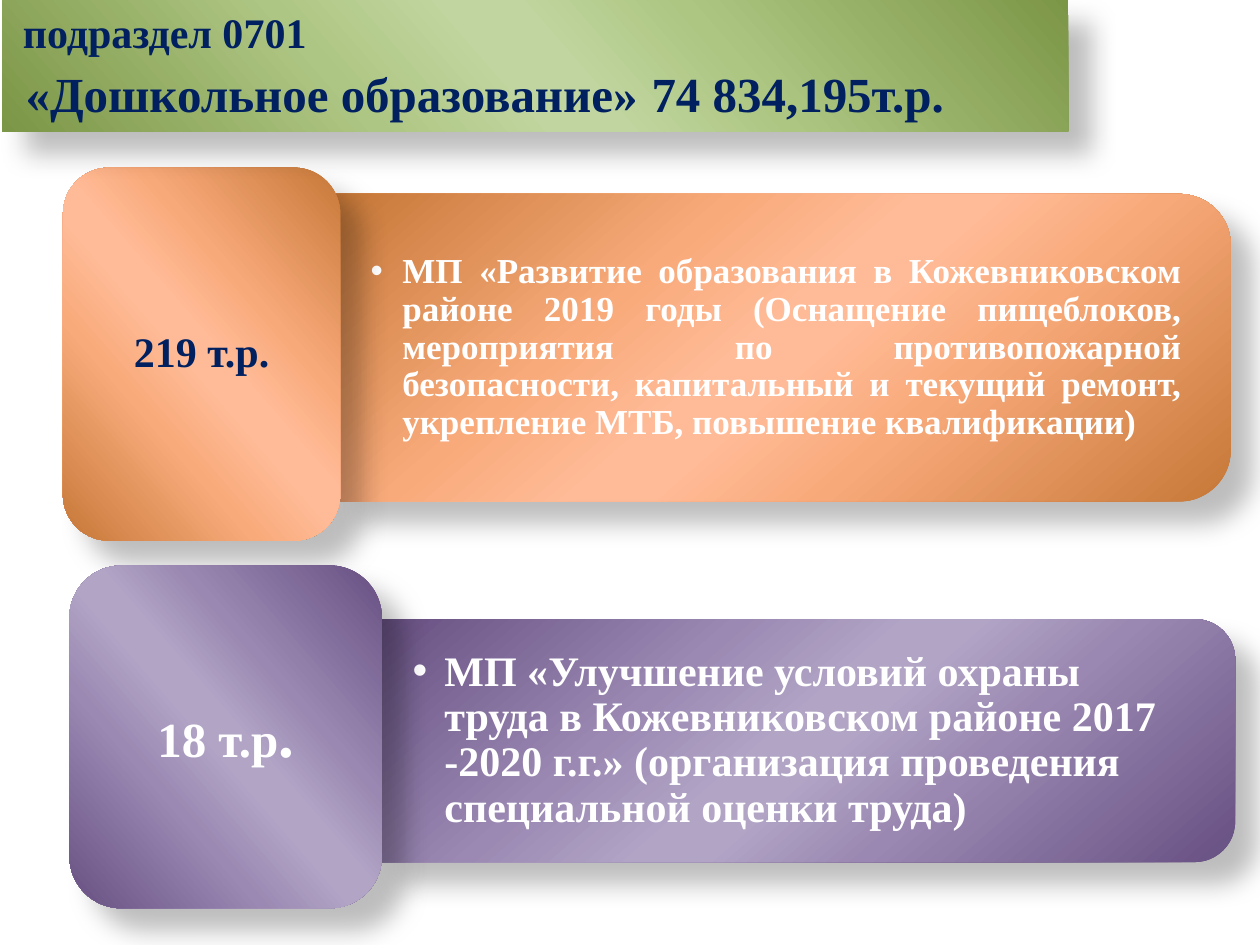
from pptx import Presentation
from pptx.dml.color import RGBColor
from pptx.enum.shapes import MSO_SHAPE
from pptx.enum.text import MSO_ANCHOR, MSO_AUTO_SIZE, PP_ALIGN
from pptx.oxml import parse_xml
from pptx.oxml.ns import nsdecls
from pptx.util import Cm, Pt

FONT = "Times New Roman"
NAVY, WHITE = "002060", "FFFFFF"
STOPS = (0, 33, 47, 53, 68, 100)
ORANGE = ("C67838", "F8A979", "FFBB97", "FFBB97", "F8AA7A", "C67838")
PURPLE = ("675082", "9A88B2", "B1A4C5", "B1A4C5", "9B89B3", "675082")
GREEN = ("7C9647", "ADC682", "C0D59F", "C0D59F", "AEC683", "7C9647")
CORNER_INSET = 0.0488


def rgb(value):
    """Return the colour for a hex string."""
    return RGBColor.from_string(value)


def place(sp, x, y, w, h):
    """Move and size a shape, in centimetres."""
    sp.left, sp.top, sp.width, sp.height = Cm(x), Cm(y), Cm(w), Cm(h)


def bring_to_front(sp):
    """Move a shape to the top of the drawing order."""
    sp.element.getparent().append(sp.element)


def style_glossy(sp, colors):
    """Give a shape the diagonal gradient and the soft shadow."""
    stops = "".join(
        f'<a:gs pos="{pos * 1000}"><a:srgbClr val="{color}"/></a:gs>'
        for pos, color in zip(STOPS, colors))
    spPr = sp.element.spPr
    spPr.append(parse_xml(
        f'<a:gradFill {nsdecls("a")} rotWithShape="1"><a:gsLst>{stops}</a:gsLst>'
        f'<a:lin ang="{139 * 60000}" scaled="0"/></a:gradFill>'))
    sp.line.fill.background()
    spPr.append(parse_xml(
        f'<a:effectLst {nsdecls("a")}><a:outerShdw blurRad="{Pt(15)}" dist="{Pt(18)}" '
        'dir="2700000" algn="ctr" rotWithShape="0"><a:srgbClr val="000000">'
        '<a:alpha val="26000"/></a:srgbClr></a:outerShdw></a:effectLst>'))


def add_run(p, text, size, color):
    """Add one bold run to a paragraph."""
    r = p.add_run()
    r.text = text
    r.font.name, r.font.size, r.font.bold = FONT, Pt(size), True
    r.font.color.rgb = rgb(color)


def build_header(title, box):
    """Turn the title placeholder into the green header band."""
    place(title, *box)
    style_glossy(title, GREEN)
    tf = title.text_frame
    tf.word_wrap = True
    tf.auto_size = MSO_AUTO_SIZE.SHAPE_TO_FIT_TEXT
    tf.vertical_anchor = MSO_ANCHOR.TOP
    p = tf.paragraphs[0]
    p.alignment = PP_ALIGN.LEFT
    add_run(p, " ", 18, NAVY)
    add_run(p, "подраздел 0701", 24, NAVY)
    p.add_line_break()
    add_run(p, " ", 24, NAVY)
    add_run(p, "«Дошкольное образование»", 28, NAVY)
    add_run(p, " ", 32, NAVY)
    add_run(p, "74 834,195т.р.", 28, NAVY)
    bring_to_front(title)


def add_bar(s, box, colors):
    """Add a horizontal bar with its right corners rounded."""
    x, y, w, h = box
    sp = s.shapes.add_shape(
        MSO_SHAPE.ROUND_2_SAME_RECTANGLE,
        Cm(x + (w - h) / 2), Cm(y + (h - w) / 2), Cm(h), Cm(w))
    sp.rotation = 90
    style_glossy(sp, colors)


def fill_program(body, box, text, size, align):
    """Set the body placeholder as a bulleted list inside its bar."""
    x, y, w, h = box
    inset = h * CORNER_INSET
    place(body, x, y + inset, w - inset, h - 2 * inset)
    tf = body.text_frame
    tf.word_wrap = True
    tf.auto_size = MSO_AUTO_SIZE.NONE
    tf.vertical_anchor = MSO_ANCHOR.MIDDLE
    tf.margin_left = tf.margin_right = Cm(0.69)
    tf.margin_top = tf.margin_bottom = Cm(0.36)
    p = tf.paragraphs[0]
    pPr = p._p.get_or_add_pPr()
    pPr.set("marL", str(Cm(0.64)))
    pPr.set("indent", str(-Cm(0.64)))
    p.alignment, p.line_spacing, p.space_before = align, 0.9, Pt(0)
    add_run(p, text, size, WHITE)
    bring_to_front(body)


def add_amount(s, box, colors, runs, color):
    """Add the rounded card that shows the amount."""
    sp = s.shapes.add_shape(MSO_SHAPE.ROUNDED_RECTANGLE, *map(Cm, box))
    style_glossy(sp, colors)
    tf = sp.text_frame
    tf.word_wrap = True
    tf.vertical_anchor = MSO_ANCHOR.MIDDLE
    p = tf.paragraphs[0]
    p.alignment, p.line_spacing = PP_ALIGN.CENTER, 0.9
    for text, size in runs:
        add_run(p, text, size, color)


def main():
    """Build the slide and save it."""
    prs = Presentation()
    prs.slide_width, prs.slide_height = Cm(25.4), Cm(19.05)
    s = prs.slides.add_slide(prs.slide_layouts[3])
    title, first, second = s.placeholders

    bar = (6.78, 3.91, 18.03, 6.2)
    add_bar(s, bar, ORANGE)
    fill_program(
        first, bar,
        "МП «Развитие образования в Кожевниковском районе 2019 годы "
        "(Оснащение пищеблоков, мероприятия по противопожарной безопасности, "
        "капитальный и текущий ремонт, укрепление МТБ, повышение квалификации)",
        20, PP_ALIGN.JUSTIFY)
    add_amount(s, (1.27, 3.38, 5.59, 7.52), ORANGE, [("219 т.р.", 24)], NAVY)

    bar = (7.63, 12.48, 17.27, 4.9)
    add_bar(s, bar, PURPLE)
    fill_program(
        second, bar,
        "МП «Улучшение условий охраны труда в Кожевниковском районе "
        "2017 -2020 г.г.» (организация проведения специальной оценки труда)",
        24, PP_ALIGN.LEFT)
    add_amount(s, (1.4, 11.4, 6.3, 6.91), PURPLE, [("18 т.р", 28), (".", 36)], WHITE)

    build_header(title, (0.05, 0, 21.49, 2.64))
    prs.save("out.pptx")


if __name__ == "__main__":
    main()
